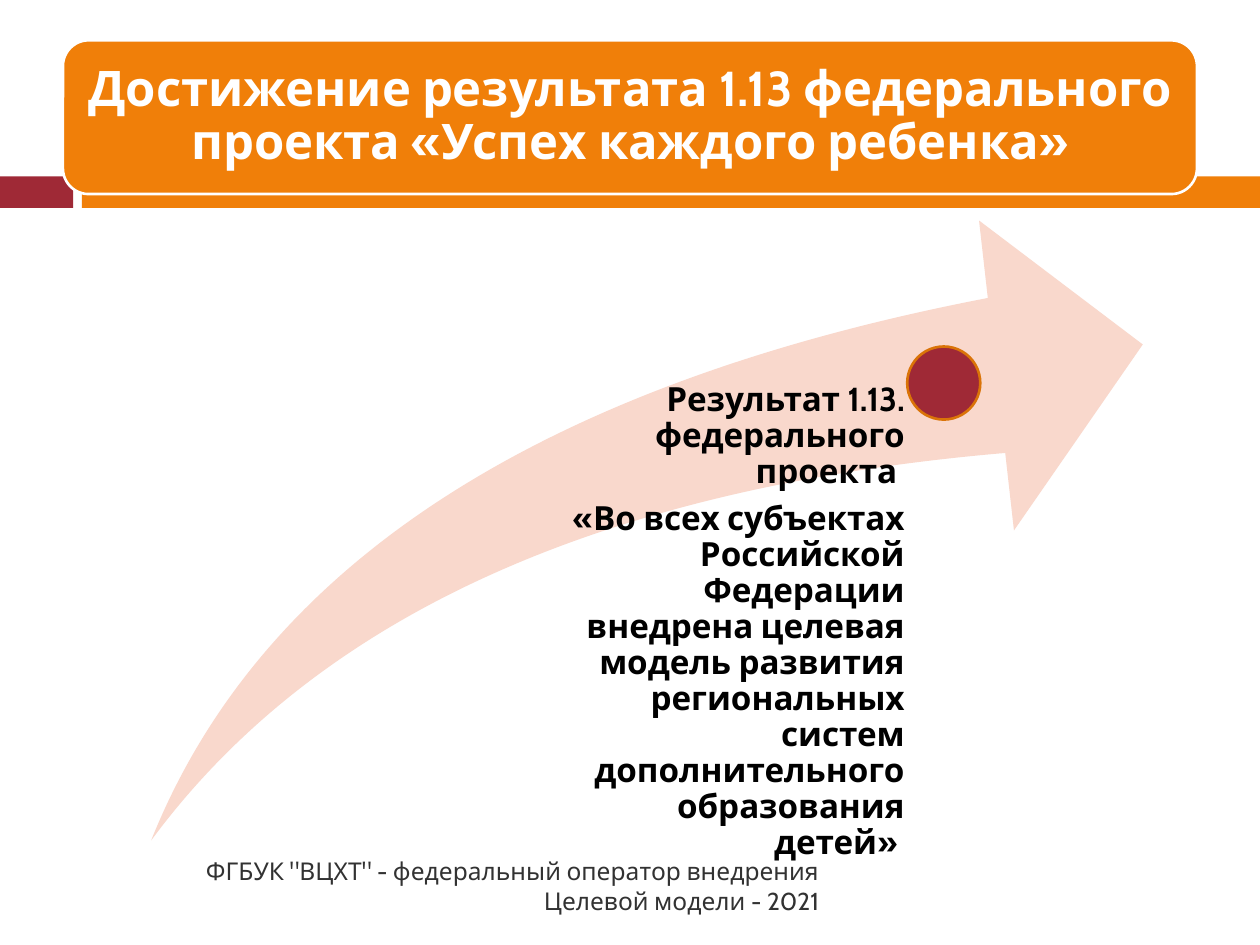
from pptx import Presentation
from pptx.dml.color import RGBColor
from pptx.enum.shapes import MSO_SHAPE
from pptx.enum.text import MSO_ANCHOR, MSO_AUTO_SIZE, PP_ALIGN
from pptx.util import Inches, Pt

RECT, ROUND = MSO_SHAPE.RECTANGLE, MSO_SHAPE.ROUNDED_RECTANGLE
SWOOSH, OVAL = MSO_SHAPE.SWOOSH_ARROW, MSO_SHAPE.OVAL
TOP, MIDDLE = MSO_ANCHOR.TOP, MSO_ANCHOR.MIDDLE
CENTER, RIGHT = PP_ALIGN.CENTER, PP_ALIGN.RIGHT

TITLE = "Достижение результата 1.13 федерального проекта «Успех каждого ребенка»"
RESULT = [
    "Результат 1.13. федерального проекта ",
    "«Во всех субъектах Российской Федерации внедрена целевая модель развития "
    "региональных систем дополнительного образования детей» ",
]
FOOTER = 'ФГБУК "ВЦХТ" - федеральный оператор внедрения Целевой модели - 2021'

FONT = "Cabin"
COLORS = {"orange": "F07F09", "red": "9F2936", "rim": "DA7308", "pink": "F9D8CC",
          "white": "FFFFFF", "black": "000000", "gray": "323232"}
WIDTH, HEIGHT = 10, 7.5
BAND = (0.5, 0.32, WIDTH - 2 * 0.5, 1.22)
STRIPE, THICK, SPLIT, GAP = 1.4, 0.25, 0.58, 0.07
DOT = 0.58

SHAPES = [
    (RECT, (0, STRIPE, SPLIT, THICK), "red", None),
    (RECT, (SPLIT + GAP, STRIPE, WIDTH - SPLIT - GAP, THICK), "orange", None),
    (ROUND, BAND, "orange", "white"),
    (SWOOSH, (1.2, 1.75, 7.87, 4.92), "pink", None),
    (OVAL, (7.2, 2.75, DOT, DOT), "red", "rim"),
]


def color(name):
    return RGBColor.from_string(COLORS[name])


def draw(slide, kind, box, fill, line):
    shape = slide.shapes.add_shape(kind, *map(Inches, box))
    shape.shadow.inherit = False
    shape.fill.solid()
    shape.fill.fore_color.rgb = color(fill)
    if line:
        shape.line.color.rgb = color(line)
        shape.line.width = Pt(1.5)
    else:
        shape.line.fill.background()
    if kind == SWOOSH:
        shape.adjustments[0] = shape.adjustments[1] = 0.25


def write(shape, box, lines, size, tint, align, anchor, pads, bold=True, lead=0.9, after=0):
    shape.left, shape.top, shape.width, shape.height = map(Inches, box)
    frame = shape.text_frame
    frame.word_wrap = True
    frame.auto_size = MSO_AUTO_SIZE.NONE
    frame.vertical_anchor = anchor
    (frame.margin_left, frame.margin_top,
     frame.margin_right, frame.margin_bottom) = map(Inches, pads)
    frame.text = "\n".join(lines)
    for para in frame.paragraphs:
        para.alignment = align
        para.line_spacing = lead
        para.space_before = Pt(0)
        para.space_after = Pt(after)
        font = para.font
        font.name, font.size, font.bold = FONT, Pt(size), bold
        font.color.rgb = color(tint)


def main():
    deck = Presentation()
    deck.slide_width, deck.slide_height = Inches(WIDTH), Inches(HEIGHT)
    slide = deck.slides.add_slide(deck.slide_layouts[5])
    for item in SHAPES:
        draw(slide, *item)

    title = slide.shapes.title
    slide.shapes._spTree.append(title._element)
    write(title, BAND, [TITLE], 28, "white", CENTER, MIDDLE, [0.12] * 4)

    note = slide.shapes.add_textbox(0, 0, 0, 0)
    write(note, (0.67, 6.83, 5.93, 0.4), [FOOTER], 14, "gray", RIGHT, MIDDLE,
          (0.1, 0.05, 0.1, 0.05), bold=False, lead=1.0)

    body = slide.shapes.add_textbox(0, 0, 0, 0)
    write(body, (4.34, 3.04, 3.15, 3.63), RESULT, 19, "black", RIGHT, TOP,
          (0, 0, 0.31, 0), after=6.5)
    deck.save("out.pptx")


if __name__ == "__main__":
    main()
